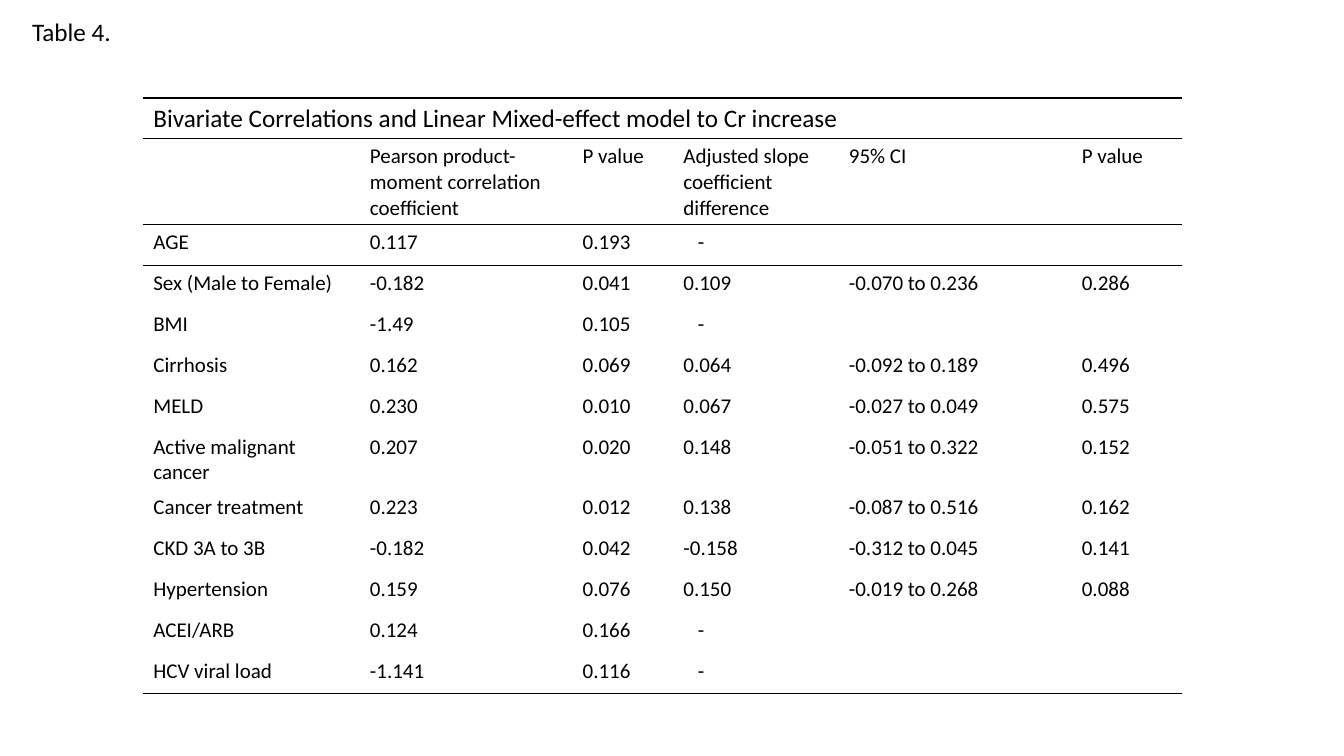
from lxml.etree import SubElement
from pptx import Presentation
from pptx.dml.color import RGBColor
from pptx.enum.text import MSO_AUTO_SIZE
from pptx.oxml import parse_xml
from pptx.oxml.ns import nsdecls, qn
from pptx.util import Cm, Pt

COLORS = {"text": "000000", "rule": "000000"}
FONT = "Calibri"
TITLE_SIZE, BODY_SIZE = 18, 15
PLAIN_STYLE = "{2D5ABB26-0587-4C30-8999-92F81FD0307C}"

TABLE_TITLE = "Bivariate Correlations and Linear Mixed-effect model to Cr increase"
HEADINGS = ["", "Pearson product-moment correlation coefficient", "P value",
            "Adjusted slope coefficient\ndifference", "95% CI", "P value"]
RESULTS = [
    ["AGE", "0.117", "0.193", "-", "", ""],
    ["Sex (Male to Female)", "-0.182", "0.041", "0.109", "-0.070 to 0.236", "0.286"],
    ["BMI", "-1.49", "0.105", "-", "", ""],
    ["Cirrhosis", "0.162", "0.069", "0.064", "-0.092 to 0.189", "0.496"],
    ["MELD", "0.230", "0.010", "0.067", "-0.027 to 0.049", "0.575"],
    ["Active malignant cancer", "0.207", "0.020", "0.148", "-0.051 to 0.322", "0.152"],
    ["Cancer treatment", "0.223", "0.012", "0.138", "-0.087 to 0.516", "0.162"],
    ["CKD 3A to 3B", "-0.182", "0.042", "-0.158", "-0.312 to 0.045", "0.141"],
    ["Hypertension", "0.159", "0.076", "0.150", "-0.019 to 0.268", "0.088"],
    ["ACEI/ARB", "0.124", "0.166", "-", "", ""],
    ["HCV viral load", "-1.141", "0.116", "-", "", ""],
]
COLUMN_WIDTHS = [5.46, 3.07, 2.29, 2.54, 4.17, 5.87, 2.79]
TEXT_COLUMNS = [0, 1, 3, 4, 5, 6]  # the coefficient heading spans columns 1 and 2
ROW_HEIGHT = 1.03


def write(frame, text, size):
    para = frame.paragraphs[0]
    if text == "-":
        para._p.get_or_add_pPr().set("marL", str(Cm(0.36)))
    for number, line in enumerate(text.split("\n")):
        if number:
            para.add_line_break()
        span = para.add_run()
        span.text = line
        span.font.name = FONT
        span.font.size = Pt(size)
        span.font.color.rgb = RGBColor.from_string(COLORS["text"])


def draw_rules(cell, sides):
    properties = cell._tc.get_or_add_tcPr()
    for position, side in enumerate(sides):
        line = parse_xml(f'<a:ln{side} {nsdecls("a")} w="{Pt(1)}"/>')
        fill = SubElement(line, qn("a:solidFill"))
        SubElement(fill, qn("a:srgbClr")).set("val", COLORS["rule"])
        properties.insert(position, line)


def add_label(page, left, top, width, height):
    box = page.shapes.add_textbox(Cm(left), Cm(top), Cm(width), Cm(height))
    box.text_frame.word_wrap = True
    box.text_frame.auto_size = MSO_AUTO_SIZE.SHAPE_TO_FIT_TEXT
    write(box.text_frame, "Table 4.", TITLE_SIZE)


def add_results_table(page, left, top):
    row_count = len(RESULTS) + 2
    frame = page.shapes.add_table(
        row_count, len(COLUMN_WIDTHS), Cm(left), Cm(top),
        Cm(sum(COLUMN_WIDTHS)), Cm(ROW_HEIGHT * row_count))
    table = frame.table
    table.first_row = table.horz_banding = False
    table._tbl.tblPr.find(qn("a:tableStyleId")).text = PLAIN_STYLE
    for column, width in zip(table.columns, COLUMN_WIDTHS):
        column.width = Cm(width)
    for row in table.rows:
        row.height = Cm(ROW_HEIGHT)

    # Title row and spanning heading
    table.cell(0, 0).merge(table.cell(0, len(COLUMN_WIDTHS) - 1))
    table.cell(1, 1).merge(table.cell(1, 2))
    write(table.cell(0, 0).text_frame, TABLE_TITLE, TITLE_SIZE)

    # Headings and values
    for row, texts in enumerate([HEADINGS] + RESULTS, start=1):
        for column, text in zip(TEXT_COLUMNS, texts):
            if text:
                write(table.cell(row, column).text_frame, text, BODY_SIZE)

    # Horizontal rules
    rules = {0: "TB", 1: "TB", 2: "T", row_count - 1: "B"}
    for row in range(row_count):
        for column in range(len(COLUMN_WIDTHS)):
            cell = table.cell(row, column)
            cell.fill.background()
            draw_rules(cell, rules.get(row, ""))


def main():
    deck = Presentation()
    deck.slide_width, deck.slide_height = Cm(33.87), Cm(19.05)
    page = deck.slides.add_slide(deck.slide_layouts[6])
    add_label(page, 0.56, 0.28, 4.65, 1.02)
    add_results_table(page, 3.61, 2.47)
    deck.save("out.pptx")


if __name__ == "__main__":
    main()
